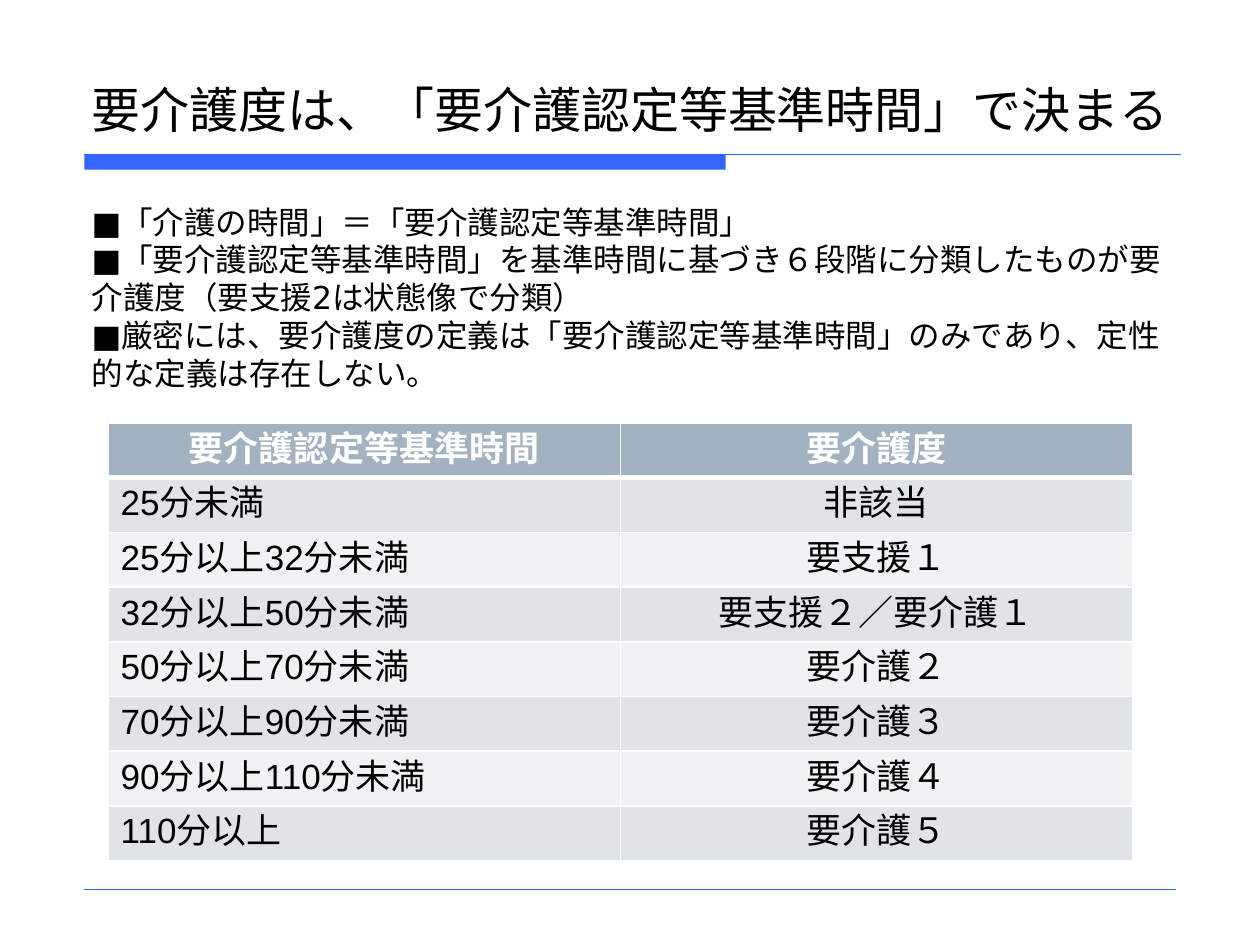
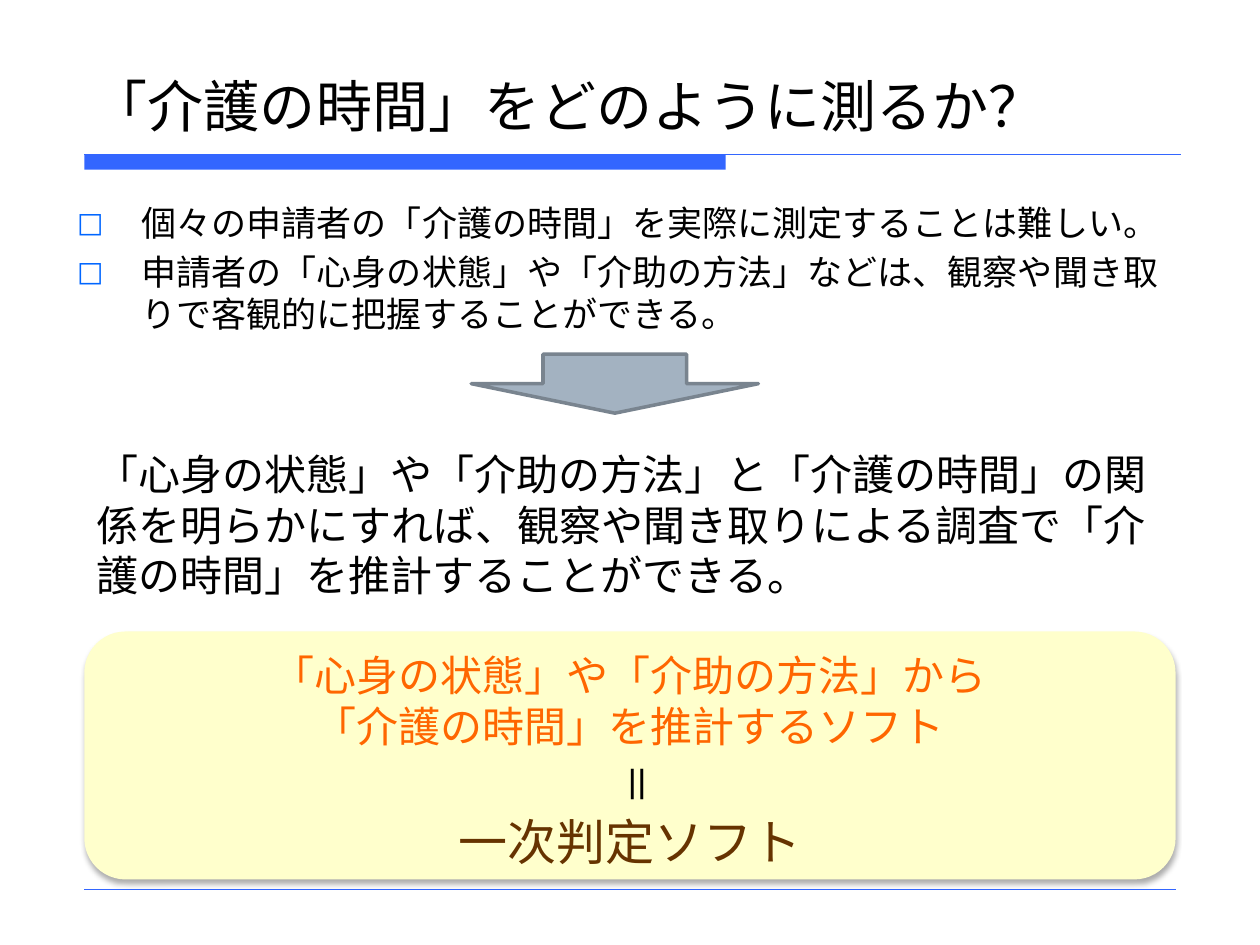
from lxml import etree
from pptx import Presentation
from pptx import util as u
from pptx.dml.color import RGBColor
from pptx.enum import shapes, text
from pptx.oxml.ns import qn

Cm, Pt = u.Cm, u.Pt
LEFT, CENTER = text.PP_ALIGN.LEFT, text.PP_ALIGN.CENTER
SANS = "DejaVu Sans"
BLUE, BULLET, SLATE, SLATE_EDGE = "3366FF", "0066FF", "A3B2C1", "79848F"
ROW_FILLS = ("F0F2F4", "E0E4E9")
BLACK, WHITE, CREAM, ORANGE, BROWN = "000000", "FFFFFF", "FFFFCC", "FF6600", "663300"

CARE_LEVELS = [
    ("要介護認定等基準時間", "要介護度"),
    ("25分未満", "非該当"),
    ("25分以上32分未満", "要支援１"),
    ("32分以上50分未満", "要支援２／要介護１"),
    ("50分以上70分未満", "要介護２"),
    ("70分以上90分未満", "要介護３"),
    ("90分以上110分未満", "要介護４"),
    ("110分以上", "要介護５"),
]


def rgb(value):
    return RGBColor.from_string(value)


def sub(parent, tag, **attrs):
    """Append a DrawingML child element."""
    el = etree.SubElement(parent, qn("a:" + tag))
    for name, value in attrs.items():
        el.set(name, str(value))
    return el


def place(sp, box):
    for name, value in zip(("left", "top", "width", "height"), box):
        setattr(sp, name, Cm(value))


def format_paragraph(p, size, color=BLACK, font=SANS, bold=False, **layout):
    for name, value in layout.items():
        setattr(p, name, value)
    for r in p.runs:
        for name, value in dict(size=Pt(size), name=font, bold=bold).items():
            setattr(r.font, name, value)
        r.font.color.rgb = rgb(color)
        sub(r.font._element, "ea", typeface=font)


def write(tf, lines, size, **fmt):
    """Fill a text frame with one paragraph per line."""
    tf.word_wrap = True
    for i, line in enumerate(lines):
        p = tf.paragraphs[0] if i == 0 else tf.add_paragraph()
        p.text = line
        format_paragraph(p, size, **fmt)


class Deck:
    def __init__(self):
        self.prs = Presentation()
        self.prs.slide_width, self.prs.slide_height = Cm(25.4), Cm(19.05)
        self.slide = None

    def add_slide(self, layout, title, size):
        """Start a slide with its title, title band and footer rule."""
        self.slide = self.prs.slides.add_slide(self.prs.slide_layouts[layout])
        self.shape("RECTANGLE", (1.7, 3.12, 12.93, 0.3), BLUE)
        self.rule(3.12, 23.8, 0.75)
        self.rule(17.93, 23.7, 0.25)
        sp = self.slide.shapes.title
        place(sp, (1.6, 0.84, 22.23, 2.08))
        tf = sp.text_frame
        settings = dict(vertical_anchor=text.MSO_ANCHOR.BOTTOM, margin_right=0,
                        auto_size=text.MSO_AUTO_SIZE.NONE)
        for name, value in settings.items():
            setattr(tf, name, value)
        write(tf, [title], size, alignment=LEFT)

    def rule(self, y, right, width):
        cx = self.slide.shapes.add_connector(
            shapes.MSO_CONNECTOR.STRAIGHT, Cm(1.7), Cm(y), Cm(right), Cm(y))
        cx.line.color.rgb = rgb(BLUE)
        cx.line.width = Pt(width)
        sub(cx.element.spPr, "effectLst")

    def shape(self, kind, box, fill, edge=None):
        sp = self.slide.shapes.add_shape(
            getattr(shapes.MSO_SHAPE, kind), *map(Cm, box))
        sp.shadow.inherit = False
        sp.fill.solid()
        sp.fill.fore_color.rgb = rgb(fill)
        if edge:
            sp.line.color.rgb = rgb(edge)
            sp.line.width = Pt(2)
        else:
            sp.line.fill.background()
        return sp

    def soft_shadow(self, sp):
        effects = sp.element.spPr.find(qn("a:effectLst"))
        shadow = sub(effects, "outerShdw", blurRad=Pt(3.5), dist=Pt(2.2),
                     dir=90 * 60000, rotWithShape=0)
        sub(sub(shadow, "srgbClr", val=BLACK), "alpha", val=32000)

    def text_box(self, box, lines, size, **fmt):
        sp = self.slide.shapes.add_textbox(*map(Cm, box))
        write(sp.text_frame, lines, size, **fmt)
        return sp

    def bullets(self, box, lines, size):
        sp = self.slide.placeholders[1]
        place(sp, box)
        tf = sp.text_frame
        tf.auto_size = text.MSO_AUTO_SIZE.NONE
        write(tf, lines, size, space_before=Pt(size * 0.2))
        for p in tf.paragraphs:
            pPr = p._p.get_or_add_pPr()
            pPr.set("marL", str(Cm(1.3)))
            pPr.set("indent", str(-Cm(1.3)))
            sub(sub(pPr, "buClr"), "srgbClr", val=BULLET)
            sub(pPr, "buSzPct", val=80000)
            sub(pPr, "buFont", typeface=SANS)
            sub(pPr, "buChar", char="□")

    def table(self, box, rows):
        """Add a table with a header row and alternating row fills."""
        n_rows, n_cols = len(rows), len(rows[0])
        tbl = self.slide.shapes.add_table(n_rows, n_cols, *map(Cm, box)).table
        for i, row in enumerate(rows):
            head = i == 0
            for j, value in enumerate(row):
                cell = tbl.cell(i, j)
                write(cell.text_frame, [value], 20, font="Arial", bold=head,
                      color=WHITE if head else BLACK,
                      alignment=CENTER if head or j else LEFT)
                self.borders(cell, top=3 if i == 1 else 1, bottom=3 if head else 1)
                cell.fill.solid()
                cell.fill.fore_color.rgb = rgb(SLATE if head else ROW_FILLS[i % 2])

    def borders(self, cell, top, bottom):
        tcPr = cell._tc.get_or_add_tcPr()
        for side, width in dict(L=1, R=1, T=top, B=bottom).items():
            ln = sub(tcPr, "ln" + side, w=Pt(width))
            sub(sub(ln, "solidFill"), "srgbClr", val=WHITE)


def care_level_slide(deck):
    deck.add_slide(5, "要介護度は、「要介護認定等基準時間」で決まる", 28)
    deck.text_box((1.6, 3.96, 22.63, 4.11), [
        "■「介護の時間」＝「要介護認定等基準時間」",
        "■「要介護認定等基準時間」を基準時間に基づき６段階に分類したものが要介護度（要支援2は状態像で分類）",
        "■厳密には、要介護度の定義は「要介護認定等基準時間」のみであり、定性的な定義は存在しない。",
    ], 18)
    deck.table((2.18, 8.53, 20.65, 8.81), CARE_LEVELS)


def measuring_slide(deck):
    deck.add_slide(1, "「介護の時間」をどのように測るか？", 32)
    deck.bullets((1.3, 3.94, 22.86, 3), [
        "個々の申請者の「介護の時間」を実際に測定することは難しい。",
        "申請者の「心身の状態」や「介助の方法」などは、観察や聞き取りで客観的に把握することができる。",
    ], 20)
    deck.text_box((1.7, 8.92, 22, 3.61), [
        "「心身の状態」や「介助の方法」と「介護の時間」の関係を明らかにすれば、"
        "観察や聞き取りによる調査で「介護の時間」を推計することができる。",
    ], 24, space_before=Pt(4.8))
    deck.shape("DOWN_ARROW", (9.5, 7.14, 5.79, 1.19), SLATE, SLATE_EDGE)

    software = deck.shape("ROUNDED_RECTANGLE", (1.7, 12.73, 22, 5), CREAM)
    deck.soft_shadow(software)
    tf = software.text_frame
    tf.vertical_anchor = text.MSO_ANCHOR.TOP
    write(tf, ["「心身の状態」や「介助の方法」から\v「介護の時間」を推計するソフト",
               "一次判定ソフト"], 24, color=ORANGE, alignment=CENTER)
    format_paragraph(tf.paragraphs[1], 28, color=BROWN, space_before=Pt(35))

    equals = deck.text_box((11.96, 15.14, 1.55, 1.4), ["＝"], 24)
    equals.element.txBody.bodyPr.set("vert", "eaVert")


def main():
    deck = Deck()
    care_level_slide(deck)
    measuring_slide(deck)
    deck.prs.save("out.pptx")


if __name__ == "__main__":
    main()
